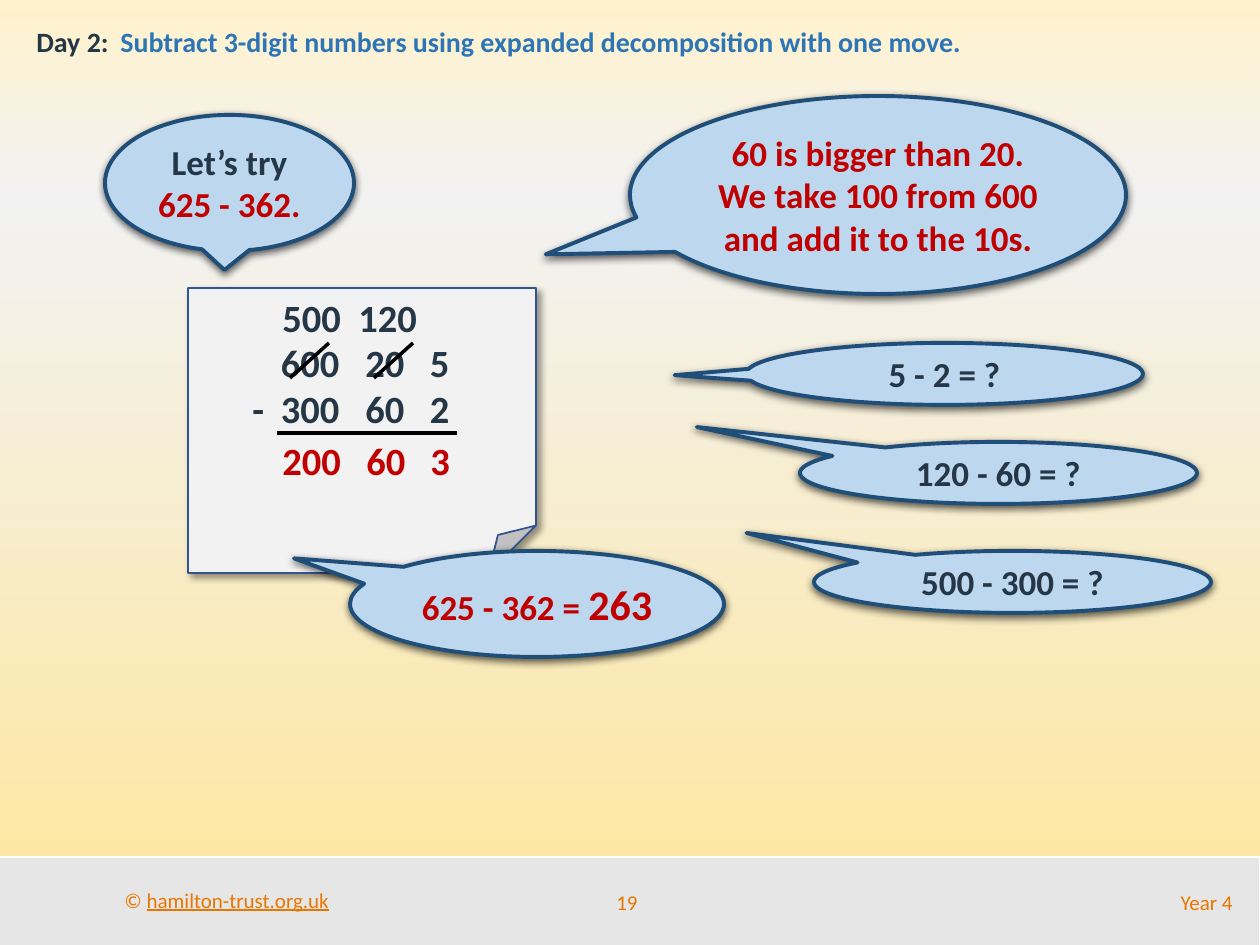
"""Build a maths slide on subtraction by expanded decomposition."""
import copy

import pptx
import pptx.dml.color
import pptx.enum.dml
import pptx.enum.shapes
import pptx.enum.text
import pptx.oxml
import pptx.oxml.ns
import pptx.util

PX = 914400 / 126
INK, RED, BLUE, GOLD = "253746", "C00000", "2E75B6", "EA7600"
KIND = pptx.enum.shapes.MSO_SHAPE
ALIGN = pptx.enum.text.PP_ALIGN
ANCHOR = pptx.enum.text.MSO_ANCHOR
qn = pptx.oxml.ns.qn


def px(*nums):
    return [pptx.util.Emu(round(n * PX)) for n in nums]


def tint(code):
    return pptx.dml.color.RGBColor.from_string(code)


def write(frame, *paras, size=20, color=INK, bold=True, align=ALIGN.LEFT,
          anchor=ANCHOR.TOP, wrap=True, tabs=(), after=0):
    """Fill a frame; each paragraph is a list of strings or (string, changes)."""
    frame.word_wrap = wrap
    frame.vertical_anchor = anchor
    for num, runs in enumerate(paras):
        para = frame.add_paragraph() if num else frame.paragraphs[0]
        if tabs:
            stops = para._p.get_or_add_pPr().makeelement(qn("a:tabLst"), {})
            para._p.get_or_add_pPr().append(stops)
            for side, pos in tabs:
                stop = stops.makeelement(
                    qn("a:tab"), {"pos": str(px(pos)[0]), "algn": side})
                stops.append(stop)
        para.alignment = align
        para.space_after = pptx.util.Pt(after)
        for item in runs:
            text, diff = (item, {}) if isinstance(item, str) else item
            run = para.add_run()
            run.text = text
            run.font.name = "Calibri"
            run.font.bold = bold
            run.font.size = pptx.util.Pt(diff.get("size", size))
            run.font.color.rgb = tint(diff.get("color", color))
            if "under" in diff:
                run.font.underline = diff["under"]


class Board:
    """Hold the style and the current slide."""

    def __init__(self, wide, high):
        self.deck = pptx.Presentation()
        self.deck.slide_width, self.deck.slide_height = px(wide, high)
        self.slide = self.deck.slides.add_slide(self.deck.slide_layouts[6])
        self.shapes = self.slide.shapes

    def wash(self, *stops):
        fill = self.slide.background.fill
        fill.gradient()
        fill.gradient_angle = 270
        group = next(self.slide._element.iter(qn("a:gsLst")))
        while len(group) < len(stops):
            group.append(copy.deepcopy(group[0]))
        for stop, (spot, code) in zip(fill.gradient_stops, stops):
            stop.position = spot
            stop.color.rgb = tint(code)

    def shape(self, kind, box, fill, line, width, shade=None):
        form = self.shapes.add_shape(kind, *px(*box))
        form.shadow.inherit = False
        form.fill.solid()
        form.fill.fore_color.rgb = tint(fill)
        form.line.color.rgb = tint(line)
        form.line.width = pptx.util.Pt(width)
        if shade:
            alpha, blur, dist, turn = shade
            xml = (f'<a:outerShdw {pptx.oxml.ns.nsdecls("a")} '
                   f'blurRad="{round(blur * 12700)}" '
                   f'dist="{round(dist * 12700)}" dir="{turn * 60000}" '
                   f'algn="tl" rotWithShape="0"><a:srgbClr val="000000">'
                   f'<a:alpha val="{alpha * 1000}"/></a:srgbClr></a:outerShdw>')
            form._element.spPr.find(qn("a:effectLst")).append(
                pptx.oxml.parse_xml(xml))
        return form

    def text(self, box, *paras, **style):
        write(self.shapes.add_textbox(*px(*box)).text_frame, *paras, **style)

    def line(self, *ends):
        rule = self.shapes.add_connector(
            pptx.enum.shapes.MSO_CONNECTOR.STRAIGHT, *px(*ends))
        rule.line.color.rgb = tint("000000")
        rule.line.width = pptx.util.Pt(2)
        props = rule._element.spPr
        props.append(props.makeelement(qn("a:effectLst"), {}))

    def bubble(self, box, tip, *paras, **style):
        form = self.shape(KIND.OVAL_CALLOUT, box, "BDD7EE", "1F4E79", 2.25,
                          (63, 4.5, 1.5, 90))
        form.adjustments[0], form.adjustments[1] = tip
        write(form.text_frame, *paras, align=ALIGN.CENTER,
              anchor=ANCHOR.MIDDLE, **style)

    def paper(self, box, *paras, top, **style):
        form = self.shape(KIND.FOLDED_CORNER, box, "F2F2F2", "325491", 1,
                          (40, 4, 3, 45))
        form.text_frame.margin_top = px(top)[0]
        write(form.text_frame, *paras, **style)


def main():
    board = Board(1260, 945)
    board.wash((0, "FFF2CC"), (0.21, "F2F2F2"), (1, "FFE699"))

    foot = {"size": 12, "color": GOLD, "bold": False}
    board.shape(KIND.RECTANGLE, (-7, 857, 1267, 91), "E7E6E6", "FFFFFF", 1)
    board.text((112, 881, 232, 38),
               ["© ", ("hamilton-trust.org.uk", {"under": True})],
               wrap=False, **foot)
    board.text((577, 877, 100, 50), ["19"], align=ALIGN.CENTER,
               anchor=ANCHOR.MIDDLE, **foot)
    board.text((819, 877, 426, 50), ["Year 4"], align=ALIGN.RIGHT,
               anchor=ANCHOR.MIDDLE, **foot)

    board.text((24, 18, 1202, 47),
               ["Day 2:\t", ("Subtract 3-digit numbers using expanded "
                             "decomposition with one move.", {"color": BLUE})],
               size=16, tabs=[("l", 84)], after=5)

    board.paper((188, 288, 348, 285), ["\t\t600\t20\t5"], ["\t-\t300\t60\t2"],
                top=51, size=22,
                tabs=[("l", 52), ("r", 139), ("r", 204), ("r", 249)])
    board.line(277, 433, 457, 433)
    for left, part in ((270, "200"), (354, "60"), (418, "3")):
        board.text((left, 431, 95, 59), [part], size=22, color=RED)
    for left in (290, 374):
        board.line(left, 378, left + 39, 343)
    board.text((270, 288, 179, 59), ["500\t120"], size=22, tabs=[("l", 76)])

    board.bubble((105, 115, 249, 136), (-0.02, 0.64),
                 ["Let’s try ", ("625 - 362.", {"color": RED})])
    board.bubble((630, 96, 496, 198), (-0.67, 0.3), ["60 is bigger than 20."],
                 ["We take 100 from 600 and add it to the 10s."], color=RED)
    for left, top, tip, ask in (
            (746, 343, (-0.68, 0.02), "5 - 2 = ?"),
            (800, 442, (-0.76, -0.74), "120 - 60 = ?"),
            (814, 551, (-0.67, -0.79), "500 - 300 = ?")):
        board.bubble((left, top, 397, 62), tip, [ask])
    board.bubble((350, 551, 374, 106), (-0.65, -0.43),
                 ["625 - 362 = ", ("263", {"size": 24})], color=RED)

    board.deck.save("out.pptx")


if __name__ == "__main__":
    main()
